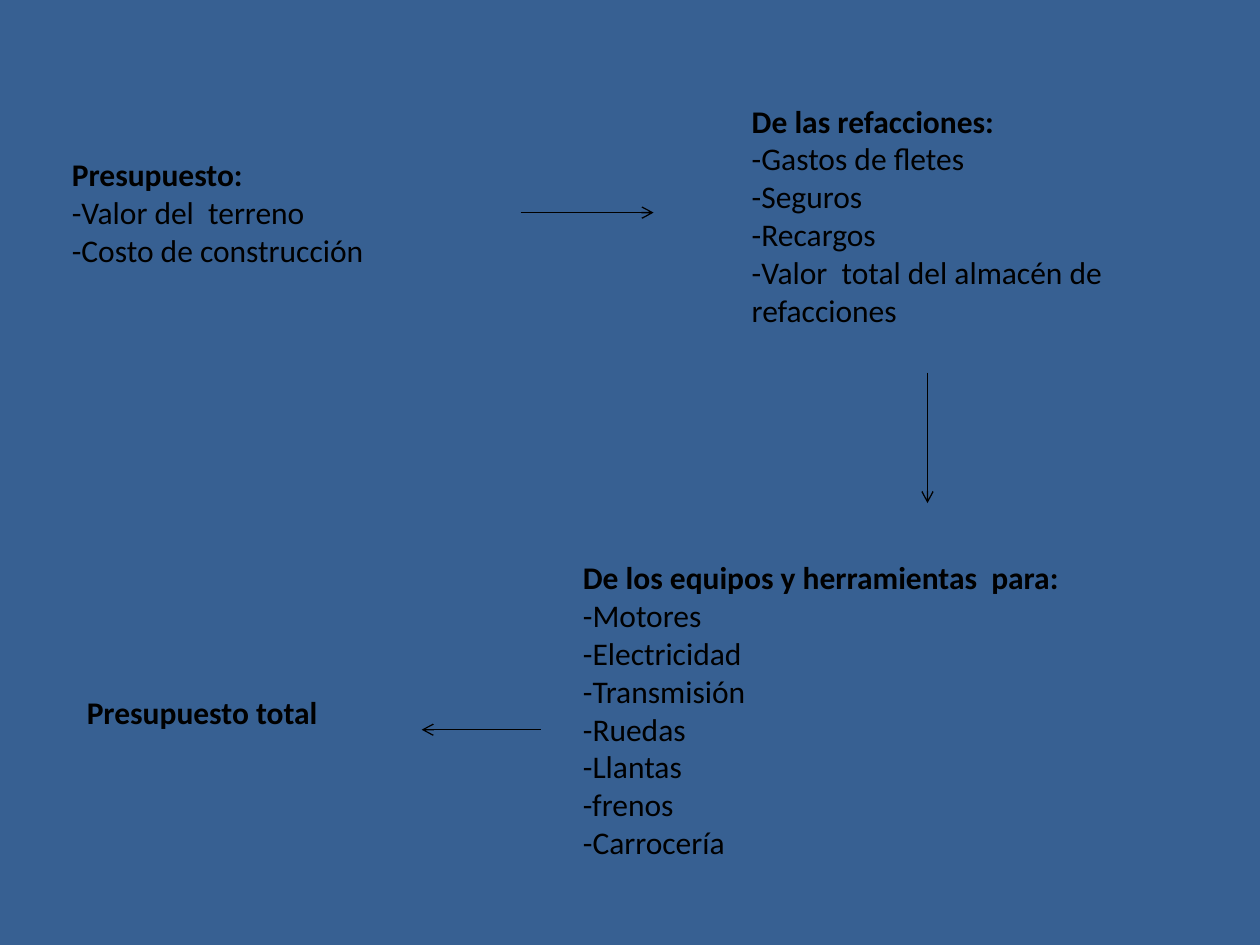
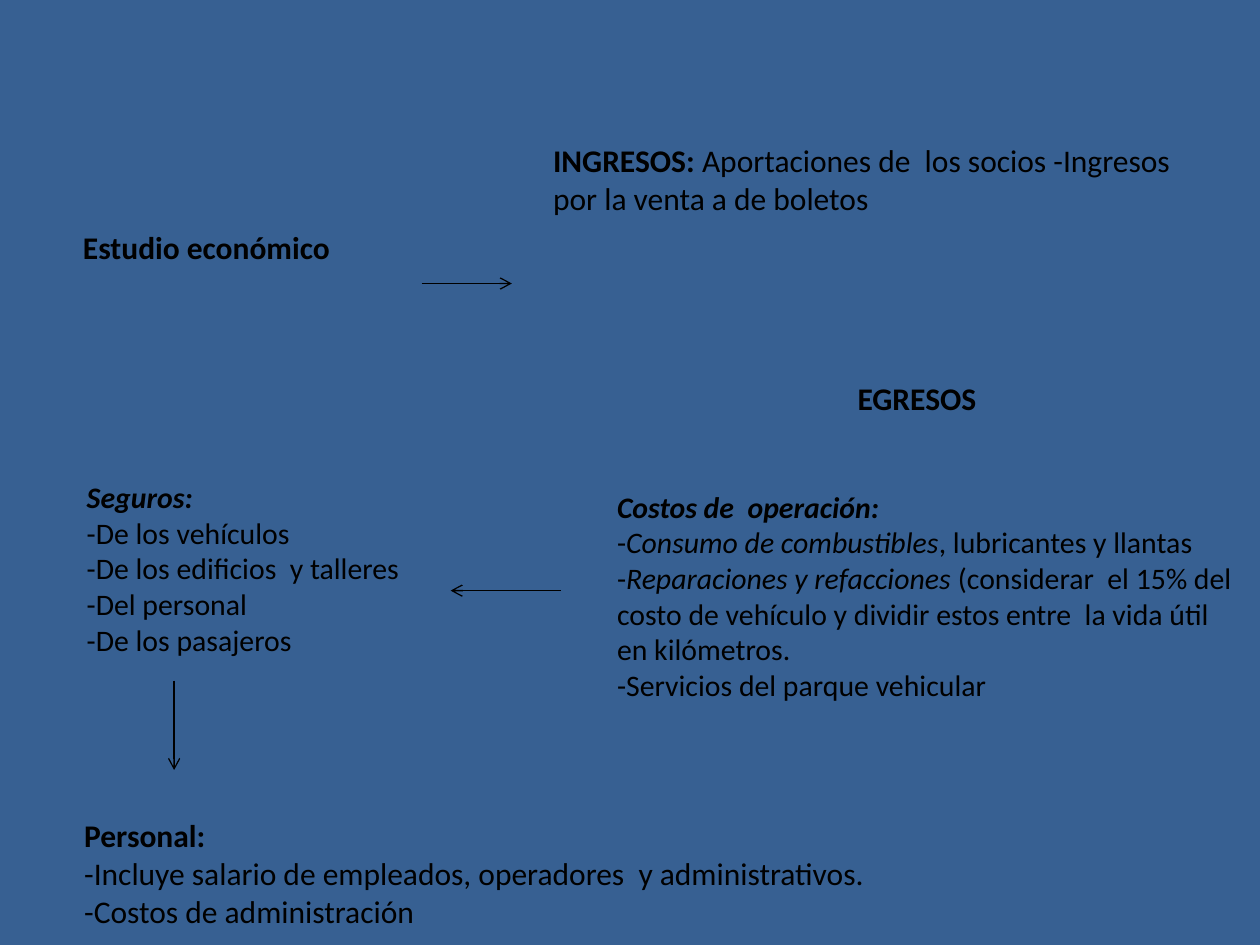
import pptx
import pptx.dml.color
import pptx.enum.shapes
import pptx.enum.text
import pptx.oxml.ns
import pptx.util
from lxml import etree

Pt = pptx.util.Pt
LEFT = pptx.enum.text.PP_ALIGN.LEFT
CENTER = pptx.enum.text.PP_ALIGN.CENTER

# Shared look
BACKGROUND = pptx.dml.color.RGBColor(0x37, 0x60, 0x92)
INK = pptx.dml.color.RGBColor(0, 0, 0)
FONT_NAME = "Calibri"
TEXT_SIZE = 18
DETAIL_SIZE = 17
ARROW_WIDTH = 0.75

# Run styles
PLAIN, BOLD, ITALIC, BOLD_ITALIC = "", "b", "i", "bi"


def add_slide(presentation):
    slide = presentation.slides.add_slide(presentation.slide_layouts[6])
    slide.background.fill.solid()
    slide.background.fill.fore_color.rgb = BACKGROUND
    return slide


def set_style(font, style):
    font.bold = "b" in style
    font.italic = "i" in style


def add_text(slide, box, paragraphs, size=TEXT_SIZE, align=LEFT, wrap=True):
    """Each paragraph is a list of (text, style) runs."""
    frame = slide.shapes.add_textbox(*map(Pt, box)).text_frame
    frame.word_wrap = wrap
    frame.auto_size = pptx.enum.text.MSO_AUTO_SIZE.SHAPE_TO_FIT_TEXT
    for index, runs in enumerate(paragraphs):
        paragraph = frame.add_paragraph() if index else frame.paragraphs[0]
        paragraph.alignment = align
        font = paragraph.font
        font.name, font.size = FONT_NAME, Pt(size)
        font.color.rgb = INK
        if len(runs) == 1:
            set_style(font, runs[0][1])
        for text, style in runs:
            run = paragraph.add_run()
            run.text = text
            if len(runs) > 1:
                set_style(run.font, style)


def add_heading(slide, box, heading, **options):
    add_text(slide, box, [[(heading, BOLD)]], align=CENTER, **options)


def add_list(slide, box, heading, items, heading_style=BOLD, size=TEXT_SIZE):
    """A heading over items; an item is a plain string or a list of runs."""
    rows = [[("-" + item, PLAIN)] if isinstance(item, str) else item
            for item in items]
    add_text(slide, box, [[(heading, heading_style)]] + rows, size)


def add_arrow(slide, start, end):
    connector = slide.shapes.add_connector(
        pptx.enum.shapes.MSO_CONNECTOR.STRAIGHT, *map(Pt, start + end))
    connector.line.color.rgb = INK
    connector.line.width = Pt(ARROW_WIDTH)
    qn = pptx.oxml.ns.qn
    line = connector.line._get_or_add_ln()
    etree.SubElement(line, qn("a:tailEnd"), type="arrow")
    etree.SubElement(connector._element.spPr, qn("a:effectLst"))


def build_budget(presentation):
    slide = add_slide(presentation)

    # Budget parts
    add_list(slide, (34, 85, 340, 73), "Presupuesto:",
             ["Valor del  terreno", "Costo de construcción"])
    add_list(slide, (422.5, 54.5, 260.5, 138), "De las refacciones:",
             ["Gastos de fletes", "Seguros", "Recargos",
              "Valor  total del almacén de refacciones"])
    add_list(slide, (326, 315.5, 368.5, 204),
             "De los equipos y herramientas  para:",
             ["Motores", "Electricidad", "Transmisión", "Ruedas",
              "Llantas", "frenos", "Carrocería"])
    add_text(slide, (42.5, 392.5, 187, 29), [[("Presupuesto total", BOLD)]])

    # Flow
    add_arrow(slide, (297.5, 121.5), (373.5, 121.5))
    add_arrow(slide, (530, 213), (530, 287.5))
    add_arrow(slide, (309, 417), (241, 417))


def build_economic_study(presentation):
    slide = add_slide(presentation)

    # Income
    add_heading(slide, (21.5, 126.5, 193, 51), "Estudio económico")
    add_text(slide, (309, 77, 391, 94), [[
        ("INGRESOS: ", BOLD),
        ("Aportaciones de  los socios -Ingresos por la venta a de boletos",
         PLAIN)]])

    # Expenses
    add_heading(slide, (482.5, 213, 83, 29), "EGRESOS", wrap=False)
    add_list(slide, (345.5, 275.5, 373, 130), "Costos de  operación:", [
        [("-", PLAIN), ("Consumo de combustibles", ITALIC),
         (", lubricantes y llantas", PLAIN)],
        [("-", PLAIN), ("Reparaciones y refacciones ", ITALIC),
         ("(considerar  el 15% del costo de vehículo y dividir estos entre"
          "  la vida útil en kilómetros.", PLAIN)],
        "Servicios del parque vehicular",
    ], BOLD_ITALIC, DETAIL_SIZE)
    add_list(slide, (42.5, 270, 258, 110), "Seguros:",
             ["De los vehículos", "De los edificios  y talleres",
              "Del personal", "De los pasajeros"],
             BOLD_ITALIC, DETAIL_SIZE)
    add_list(slide, (41, 463, 619, 73), "Personal:",
             ["Incluye salario de empleados, operadores  y administrativos.",
              "Costos de administración"])

    # Flow
    add_arrow(slide, (241, 162), (292.5, 162))
    add_arrow(slide, (320.5, 337.5), (257.5, 337.5))
    add_arrow(slide, (99.5, 389), (99.5, 440))


def main():
    presentation = pptx.Presentation()
    presentation.slide_width = Pt(720)
    presentation.slide_height = Pt(540)
    build_budget(presentation)
    build_economic_study(presentation)
    presentation.save("out.pptx")


if __name__ == "__main__":
    main()
